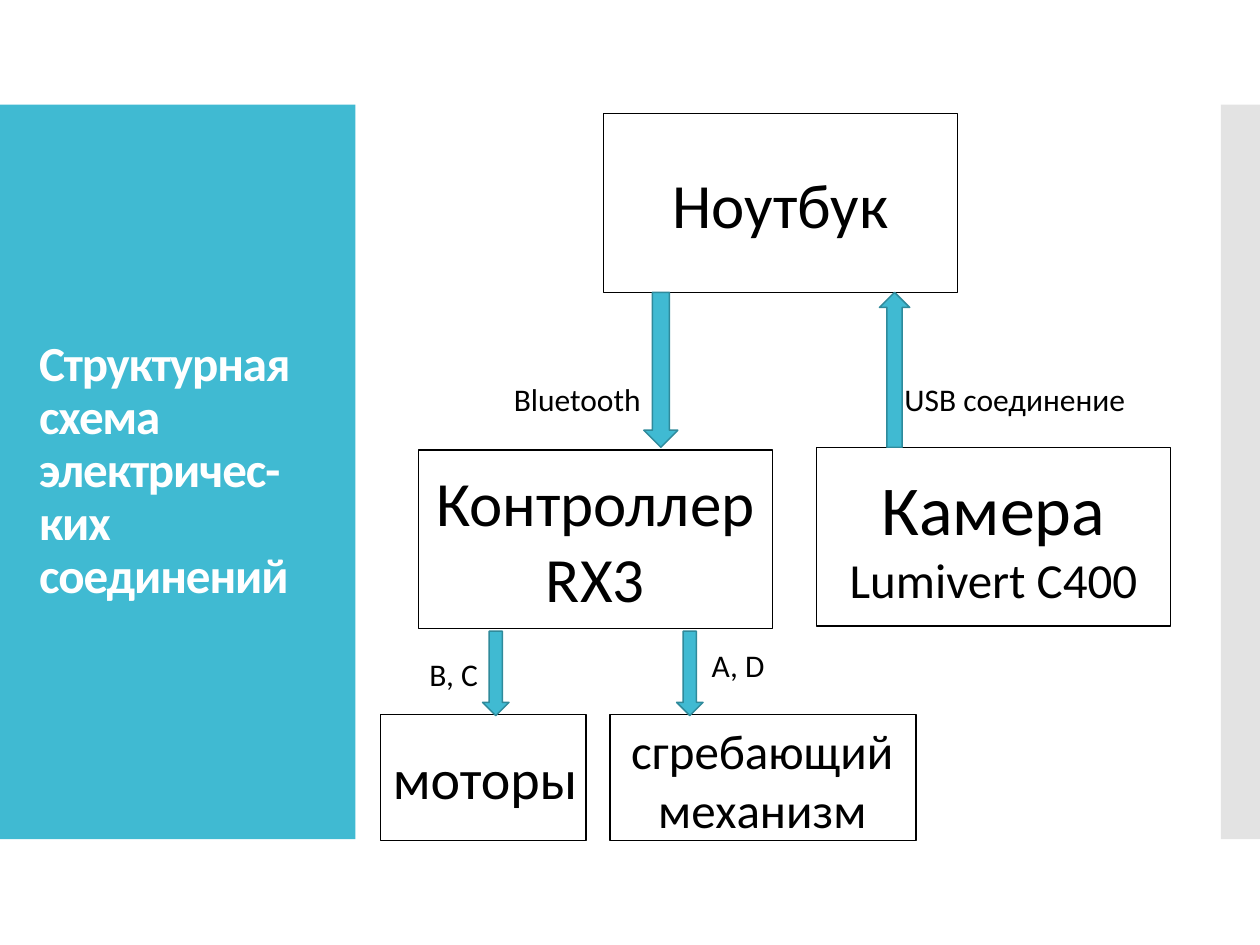
import pptx
import pptx.dml.color
import pptx.enum.shapes
import pptx.enum.text
import pptx.util
from lxml import etree
from pptx.oxml.ns import qn
from pptx.util import Inches

SHAPES = pptx.enum.shapes.MSO_SHAPE
ALIGN = pptx.enum.text.PP_ALIGN
MIDDLE = pptx.enum.text.MSO_ANCHOR.MIDDLE
AUTO_SIZE = pptx.enum.text.MSO_AUTO_SIZE
TEAL, DARK_TEAL, WHITE, BLACK, GRAY = "40BAD2", "2F8A9B", "FFFFFF", "000000", "C8C8C8"


def color(hex_value):
    """Return the RGB colour for a hex string."""
    return pptx.dml.color.RGBColor.from_string(hex_value)


def add_block(slide, kind, left, top, width, height, fill, line=None):
    """Add a flat preset shape with an optional thin outline."""
    shape = slide.shapes.add_shape(kind, Inches(left), Inches(top), Inches(width), Inches(height))
    shape.shadow.inherit = False
    shape.fill.solid()
    shape.fill.fore_color.rgb = color(fill)
    if line:
        shape.line.color.rgb = color(line)
        shape.line.width = pptx.util.Pt(0.85)
    else:
        shape.line.fill.background()
    return shape


def write_lines(shape, lines, align, text_color=BLACK):
    """Write one paragraph for each pair of text and size."""
    frame = shape.text_frame
    frame.text = "\n".join(text for text, size in lines)
    for paragraph, (text, size) in zip(frame.paragraphs, lines):
        paragraph.alignment = align
        paragraph.font.name = "Calibri"
        paragraph.font.size = pptx.util.Pt(size)
        paragraph.font.color.rgb = color(text_color)


def add_box(slide, left, top, width, height, lines):
    """Add an outlined white box with centred text."""
    box = add_block(slide, SHAPES.RECTANGLE, left, top, width, height, WHITE, BLACK)
    box.text_frame.vertical_anchor = MIDDLE
    write_lines(box, lines, ALIGN.CENTER)


def add_label(slide, left, top, width, height, lines, align=ALIGN.LEFT):
    """Add unwrapped text that sizes its own frame."""
    label = slide.shapes.add_textbox(Inches(left), Inches(top), Inches(width), Inches(height))
    label.text_frame.word_wrap = False
    label.text_frame.auto_size = AUTO_SIZE.SHAPE_TO_FIT_TEXT
    write_lines(label, lines, align)


def add_title_panel(slide, left, top, width, height):
    """Place the teal panel and the slide title on it."""
    panel = add_block(slide, SHAPES.RECTANGLE, left, top, width, height, TEAL)
    title = slide.shapes.title
    panel._element.addnext(title._element)
    title.left, title.top = Inches(left + 0.21), Inches(top + 0.4)
    title.width, title.height = Inches(width - 0.4), Inches(height - 0.8)
    write_lines(title, [("Структурная схема электричес-ких соединений", 28)], ALIGN.LEFT, WHITE)
    frame = title.text_frame
    frame.word_wrap = True
    frame.auto_size = AUTO_SIZE.NONE
    frame.vertical_anchor = MIDDLE
    paragraph = frame.paragraphs[0]
    paragraph.line_spacing = 0.9
    paragraph.font.bold = True
    paragraph.runs[0]._r.get_or_add_rPr().set("spc", "-60")


def add_side_strip(slide, left, top, width, height):
    """Place the half-transparent strip at the slide edge."""
    strip = add_block(slide, SHAPES.RECTANGLE, left, top, width, height, GRAY)
    fill_color = strip._element.spPr.find(qn("a:solidFill"))[0]
    etree.SubElement(fill_color, qn("a:alpha")).set("val", "50000")


def add_diagram(slide, left, top):
    """Place the devices, their links and the link labels."""
    devices = [
        (1.77, 0, [("Ноутбук", 36)]),
        (0.3, 2.67, [("Контроллер RX3", 36)]),
        (3.46, 2.65, [("Камера", 40), ("Lumivert C400", 28)]),
    ]
    for x, y, lines in devices:
        add_box(slide, left + x, top + y, 2.81, 1.42, lines)

    add_box(slide, left, top + 4.77, 1.63, 1, [])
    add_label(slide, left, top + 4.95, 1.74, 0.64, [("моторы", 32)])
    add_box(slide, left + 1.82, top + 4.77, 2.43, 1, [])
    mechanism = [("сгребающий", 28), ("механизм", 28)]
    add_label(slide, left + 1.88, top + 4.77, 2.3, 1.04, mechanism, ALIGN.CENTER)

    links = [
        (SHAPES.DOWN_ARROW, 2.09, 1.42, 0.27, 1.23),
        (SHAPES.UP_ARROW, 3.96, 1.42, 0.24, 1.23),
        (SHAPES.DOWN_ARROW, 0.81, 4.11, 0.21, 0.67),
        (SHAPES.DOWN_ARROW, 2.35, 4.11, 0.21, 0.67),
    ]
    for kind, x, y, width, height in links:
        add_block(slide, kind, left + x, top + y, width, height, TEAL, DARK_TEAL)

    labels = [
        ("Bluetooth", 0.96, 2.07, 1.3),
        ("USB соединение", 4.06, 2.07, 2.02),
        ("B, C", 0.29, 4.25, 0.61),
        ("A, D", 2.53, 4.18, 0.65),
    ]
    for text, x, y, width in labels:
        add_label(slide, left + x, top + y, width, 0.4, [(text, 18)])


def main():
    """Build the slide and save it."""
    presentation = pptx.Presentation()
    presentation.slide_width, presentation.slide_height = Inches(10), Inches(7.5)
    slide = presentation.slides.add_slide(presentation.slide_layouts[5])
    add_title_panel(slide, 0, 0.83, 2.82, 5.83)
    add_side_strip(slide, 9.69, 0.83, 0.31, 5.83)
    add_diagram(slide, 3.02, 0.9)
    presentation.save("out.pptx")


if __name__ == "__main__":
    main()
